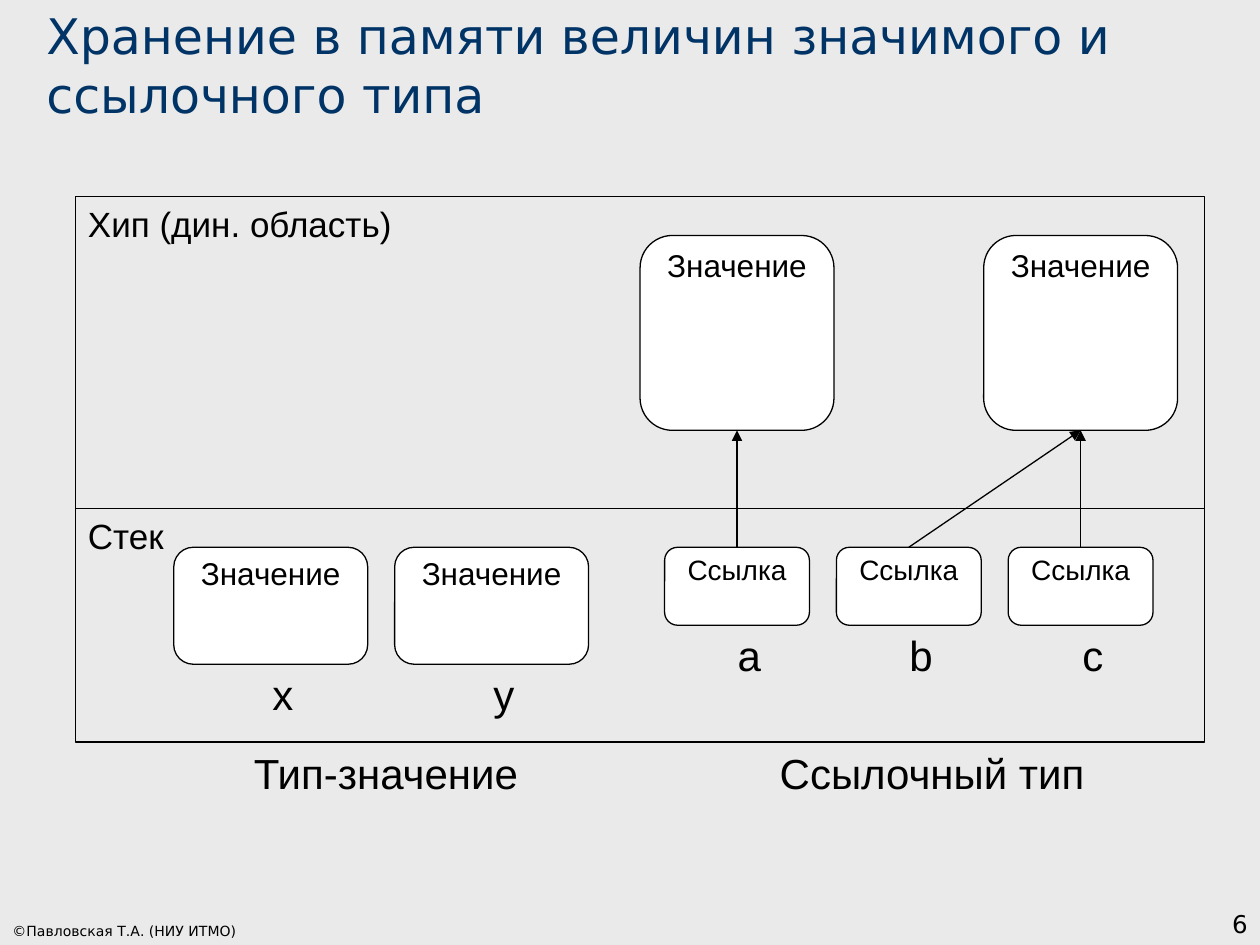
from pptx import Presentation
from pptx.dml.color import RGBColor
from pptx.enum.shapes import MSO_CONNECTOR as Line, MSO_SHAPE as Shape
from pptx.enum.text import MSO_ANCHOR as Anchor, PP_ALIGN as Align
from pptx.oxml.ns import qn
from pptx.util import Inches, Pt
from lxml.etree import SubElement


def color(value):
    """Turn a hex string into a colour."""
    return RGBColor.from_string(value)


class Diagram:
    """Style of the memory diagram and the slide it is drawn on."""

    LEFT, TOP = 0.6, 1.56
    COL, ROW = 8.96 / 46, 4.33 / 14
    INK, PAPER, BACK, TITLE = "000000", "FFFFFF", "EAEAEA", "003366"
    BODY, HEADING = "Arial", "DejaVu Sans"
    STROKE = Pt(0.75)

    def __init__(self, prs):
        """Add a blank slide with the background colour."""
        self.s = prs.slides.add_slide(prs.slide_layouts[6])
        fill = self.s.background.fill
        fill.solid()
        fill.fore_color.rgb = color(self.BACK)

    def point(self, col, row):
        """Convert grid coordinates to a position on the slide."""
        return Inches(self.LEFT + col * self.COL), Inches(self.TOP + row * self.ROW)

    def frame(self, col, row, cols, rows):
        """Convert a grid area to left, top, width and height."""
        return *self.point(col, row), Inches(cols * self.COL), Inches(rows * self.ROW)

    def set_text(self, sp, text, size, font, ink, align, anchor):
        """Put one styled paragraph into a shape."""
        tf = sp.text_frame
        tf.word_wrap = True
        tf.vertical_anchor = anchor
        p = tf.paragraphs[0]
        p.text = text
        p.alignment = align
        p.font.size, p.font.name = Pt(size), font
        p.font.color.rgb = color(ink)

    def heading(self, text, x, y, w, h, size, ink=INK, align=Align.LEFT):
        """Add a bottom-anchored text box outside the grid, in inches."""
        sp = self.s.shapes.add_textbox(*map(Inches, (x, y, w, h)))
        self.set_text(sp, text, size, self.HEADING, ink, align, Anchor.BOTTOM)

    def shape(self, kind, area, text, size, align, fill=None, outlined=True):
        """Add a preset shape with text at its top."""
        sp = self.s.shapes.add_shape(kind, *self.frame(*area))
        sp.shadow.inherit = False
        if fill:
            sp.fill.solid()
            sp.fill.fore_color.rgb = color(fill)
        else:
            sp.fill.background()
        if outlined:
            sp.line.color.rgb = color(self.INK)
            sp.line.width = self.STROKE
        else:
            sp.line.fill.background()
        self.set_text(sp, text, size, self.BODY, self.INK, align, Anchor.TOP)
        return sp

    def region(self, text, row, rows):
        """Add a full-width memory region."""
        self.shape(Shape.RECTANGLE, (0, row, 46, rows), text, 20, Align.LEFT)

    def cell(self, text, size, *area, fill=PAPER, outlined=True):
        """Add a rounded memory cell with narrow margins."""
        sp = self.shape(Shape.ROUNDED_RECTANGLE, area, text, size, Align.CENTER, fill, outlined)
        tf = sp.text_frame
        tf.margin_left = tf.margin_right = Inches(0.02)
        tf.margin_top = tf.margin_bottom = Inches(0.01)

    def label(self, text, col, row, cols=2.9):
        """Add a caption without fill and outline."""
        self.cell(text, 24, col, row, cols, 2, fill=None, outlined=False)

    def arrow(self, start, end):
        """Add an arrow between two grid points."""
        c = self.s.shapes.add_connector(Line.STRAIGHT, *self.point(*start), *self.point(*end))
        c.line.color.rgb = color(self.INK)
        c.line.width = self.STROKE
        props = c._element.spPr
        SubElement(props.find(qn("a:ln")), qn("a:tailEnd"), type="triangle")
        SubElement(props, qn("a:effectLst"))


def main():
    """Build the slide and save it."""
    prs = Presentation()
    prs.slide_width, prs.slide_height = Inches(10), Inches(7.5)
    d = Diagram(prs)

    d.heading("©Павловская Т.А. (НИУ ИТМО)", 0, 7.22, 3.11, 0.28, 8)
    d.heading("6", 7.92, 7, 2.08, 0.5, 14, align=Align.RIGHT)
    d.heading("Хранение в памяти величин значимого и ссылочного типа",
              0.27, 0, 8.93, 1.03, 28, ink=d.TITLE)

    d.region("Хип (дин. область)", 0, 8)
    d.region("Стек", 8, 6)

    for name, col in (("x", 4), ("y", 13)):
        d.cell("Значение", 18, col, 9, 7.9, 3)
        d.label(name, col + 3, 12)

    heap_a, heap_bc = 23, 37
    for col in (heap_a, heap_bc):
        d.cell("Значение", 18, col, 1, 7.9, 5)

    for name, col, target in (("а", 24, heap_a), ("b", 31, heap_bc), ("c", 38, heap_bc)):
        d.cell("Ссылка", 16, col, 9, 5.9, 2)
        d.label(name, col + 2, 11)
        d.arrow((col + 2.95, 9), (target + 3.95, 6))

    d.label("Тип-значение", 6.4, 14, 12.5)
    d.label("Ссылочный тип", 26.6, 14, 16.6)
    prs.save("out.pptx")


if __name__ == "__main__":
    main()
